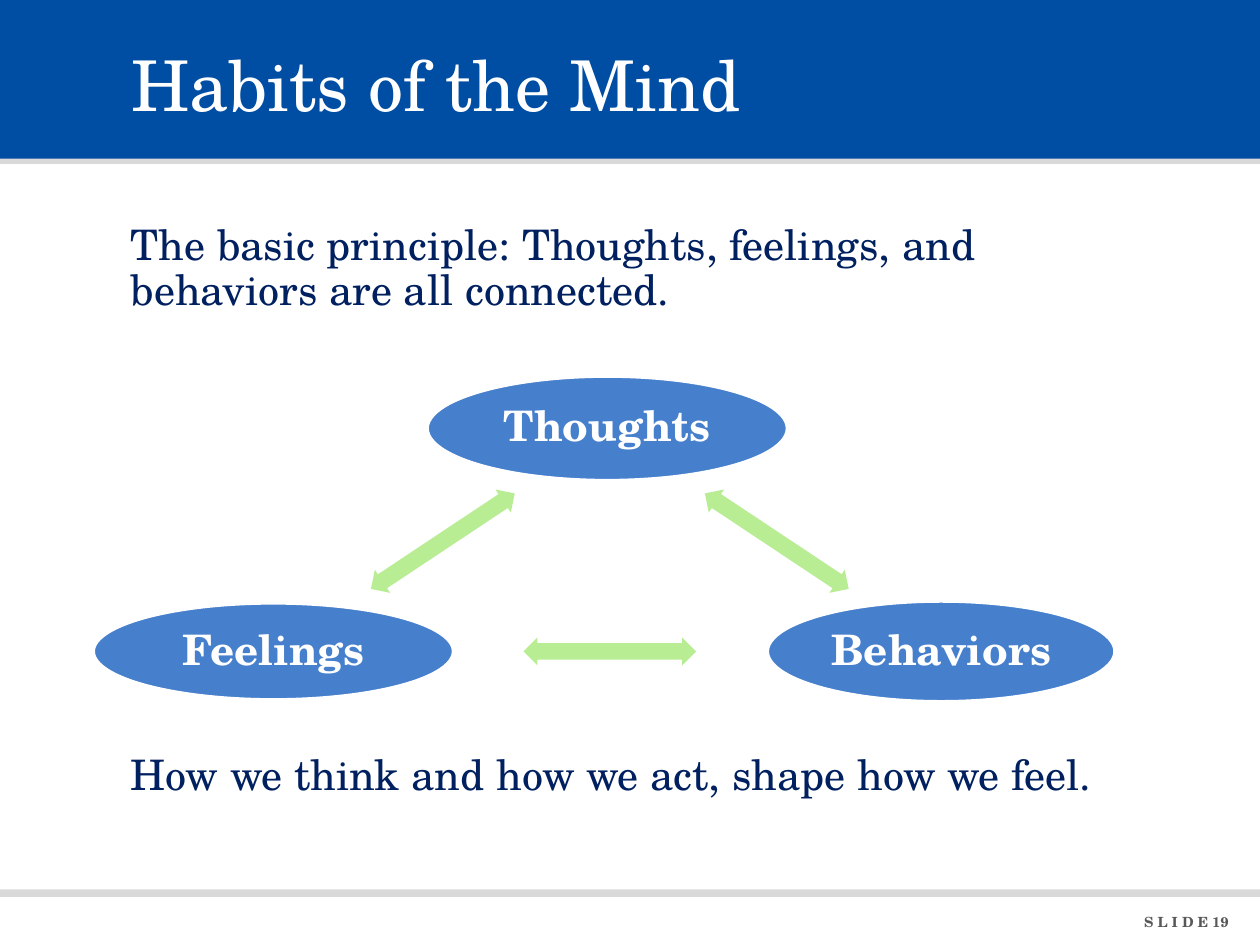
import pptx
import pptx.util
import pptx.dml.color
import pptx.enum.shapes
import pptx.enum.text

RGB = pptx.dml.color.RGBColor
SHAPE = pptx.enum.shapes.MSO_SHAPE
ALIGN = pptx.enum.text.PP_ALIGN
MIDDLE = pptx.enum.text.MSO_ANCHOR.MIDDLE

BLUE = RGB(0x00, 0x4D, 0xA4)
NAVY = RGB(0x00, 0x20, 0x60)
OVAL = RGB(0x46, 0x7F, 0xCC)
GREEN = RGB(0xB8, 0xED, 0x93)
SILVER = RGB(0xDA, 0xD9, 0xD9)
GREY = RGB(0x58, 0x58, 0x58)
WHITE = RGB(0xFF, 0xFF, 0xFF)

FONT = "TeX Gyre Schola"
WIDE, HIGH = 10, 7.5
LEFT = 0.94
MID = 4.82    # centre line of the triangle
TOP = 3.4     # centre of the upper oval
BASE = 5.17   # centre of the lower ovals
SIDE = 2.65   # from the centre line to a lower oval
TILT = 33.6


def box(*sizes):
    return [pptx.util.Inches(size) for size in sizes]


def write(shape, text, size, color, bold=False, align=ALIGN.LEFT, space=1.0):
    frame = shape.text_frame
    frame.word_wrap = True
    frame.text = text
    para = frame.paragraphs[0]
    para.alignment = align
    para.line_spacing = space
    style = {"name": FONT, "size": pptx.util.Pt(size), "bold": bold}
    for key, value in style.items():
        setattr(para.font, key, value)
    para.font.color.rgb = color
    return frame


def paint(slide, kind, place, color):
    """Add a flat shape without an outline."""
    shape = slide.shapes.add_shape(kind, *box(*place))
    shape.shadow.inherit = False
    shape.fill.solid()
    shape.fill.fore_color.rgb = color
    shape.line.fill.background()
    return shape


def band(slide, top, high, color):
    paint(slide, SHAPE.RECTANGLE, (0, top, WIDE, high), color)


def head(slide, text):
    title = slide.shapes.title
    title.left, title.top, title.width, title.height = box(LEFT, 0, 7.71, 1.32)
    frame = write(title, text, 40, WHITE)
    frame.vertical_anchor = MIDDLE
    # The title comes first in the layout, so lift it above the bands
    slide.shapes._spTree.append(title._element)


def note(slide, place, text, *style, **more):
    write(slide.shapes.add_textbox(*box(*place)), text, *style, **more)


def oval(slide, x, y, wide, high, text):
    shape = paint(slide, SHAPE.OVAL, (x - wide / 2, y - high / 2, wide, high), OVAL)
    shape.line.color.rgb = WHITE
    shape.line.width = pptx.util.Pt(2)
    frame = write(shape, text, 24, WHITE, True, ALIGN.CENTER, 0.9)
    frame.vertical_anchor = MIDDLE
    for edge in ("left", "right", "top", "bottom"):
        setattr(frame, "margin_" + edge, 0)


def arrow(slide, x, y, turn):
    wide, high = 1.37, 0.22
    place = (x - wide / 2, y - high / 2, wide, high)
    shape = paint(slide, SHAPE.LEFT_RIGHT_ARROW, place, GREEN)
    shape.adjustments[0] = 0.6
    shape.adjustments[1] = 0.5
    shape.rotation = turn


def main():
    deck = pptx.Presentation()
    deck.slide_width, deck.slide_height = box(WIDE, HIGH)
    slide = deck.slides.add_slide(deck.slide_layouts[5])

    band(slide, 1.05, 0.25, SILVER)
    band(slide, 0, 1.26, BLUE)
    band(slide, 7.06, 0.06, SILVER)
    head(slide, "Habits of the Mind")
    note(slide, (8.43, 7.2, 1.42, 0.23), "S L I D E 19", 8, GREY,
         bold=True, align=ALIGN.RIGHT)

    lines = (
        (1.73, 0.9, "The basic principle: Thoughts, feelings, and behaviors are all connected."),
        (5.94, 0.5, "How we think and how we act, shape how we feel."),
    )
    for top, high, text in lines:
        note(slide, (LEFT, top, 8.33, high), text, 24, NAVY, space=0.9)

    oval(slide, MID, TOP, 2.86, 0.83, "Thoughts")
    oval(slide, MID + SIDE, BASE, 2.76, 0.8, "Behaviors")
    oval(slide, MID - SIDE, BASE, 2.86, 0.77, "Feelings")

    half = (TOP + BASE) / 2 + 0.01
    for step, y, turn in ((1, half, TILT), (0, BASE, 0), (-1, half, -TILT)):
        arrow(slide, MID + step * SIDE / 2 + (0.02 if step else 0.02), y, turn)

    deck.save("out.pptx")


if __name__ == "__main__":
    main()
